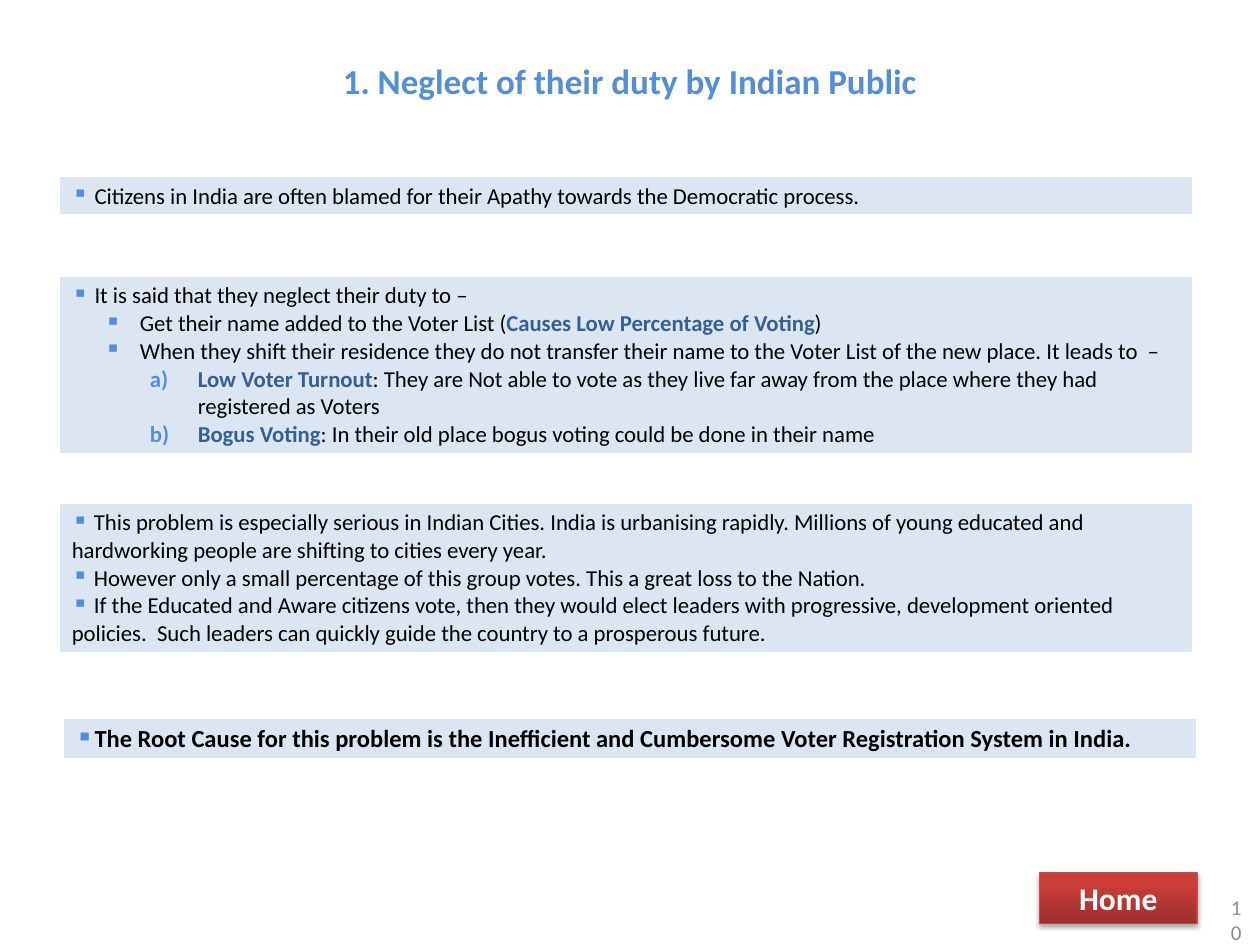
"""Build the slide on how citizens neglect their voting duty."""
from lxml import etree
from pptx import Presentation
from pptx.dml.color import RGBColor
from pptx.enum.shapes import MSO_SHAPE
from pptx.enum.text import MSO_ANCHOR, PP_ALIGN
from pptx.oxml.ns import qn
from pptx.util import Inches, Pt

RECT = MSO_SHAPE.RECTANGLE
MIDDLE = MSO_ANCHOR.MIDDLE
LEFT, CENTER = PP_ALIGN.LEFT, PP_ALIGN.CENTER

FONT = "Calibri"
COLORS = {
    "title": "558ED5", "bullet": "558ED5", "text": "000000", "key": "376092",
    "panel": "DCE6F2", "white": "FFFFFF", "edge": "BF4C48", "page": "8C8C8C",
}
TITLE = "1. Neglect of their duty by Indian Public"
GRADE = [(0, "9C2F2D"), (80, "CB3E3A"), (100, "CE3B37")]
BORDERS = [("lnL", 1), ("lnR", 1), ("lnT", 1), ("lnB", 3)]

# style: level, left margin, first-line indent, mark
STYLES = {
    "point": (0, 0.18, -0.18, "▪"),
    "root": (0, 0.15, -0.15, "▪"),
    "flow": (0, 0, 0, "▪"),
    "sub": (1, 0.54, -0.28, "▪"),
    "letter": (2, 1, -0.38, None),
}
PANELS = [
    {"at": (0.47, 1.4), "high": 0.32, "size": 13, "lines": [
        ("point", [("Citizens in India are often blamed for their Apathy towards "
                    "the Democratic process.", "text", False)]),
    ]},
    {"at": (0.47, 2.19), "high": 1.4, "size": 13, "lines": [
        ("point", [("It is said that they neglect their duty to –", "text", False)]),
        ("sub", [("Get their name added to the Voter List (", "text", False),
                 ("Causes Low Percentage of Voting", "key", True),
                 (")", "text", False)]),
        ("sub", [("When they shift their residence they do not transfer their name "
                  "to the Voter List of the new place. It leads to  –", "text", False)]),
        ("letter", [("Low Voter Turnout", "key", True),
                    (": They are Not able to vote as they live far away from the "
                     "place where they had registered as Voters", "text", False)]),
        ("letter", [("Bogus Voting", "key", True),
                    (": In their old place bogus voting could be done in their name",
                     "text", False)]),
    ]},
    {"at": (0.47, 3.99), "high": 1.18, "size": 13, "lines": [
        ("flow", [(" This problem is especially serious in Indian Cities. India is "
                   "urbanising rapidly. Millions of young educated and hardworking "
                   "people are shifting to cities every year.", "text", False)]),
        ("flow", [(" However only a small percentage of this group votes. This a "
                   "great loss to the Nation.", "text", False)]),
        ("flow", [(" If the Educated and Aware citizens vote, then they would elect "
                   "leaders with progressive, development oriented policies.  Such "
                   "leaders can quickly guide the country to a prosperous future.",
                   "text", False)]),
    ]},
    {"at": (0.5, 5.7), "high": 0.33, "size": 14, "lines": [
        ("root", [("The Root Cause for this problem is the Inefficient and "
                   "Cumbersome Voter Registration System in India.", "text", True)]),
    ]},
]


def box(*sides):
    return [Inches(side) for side in sides]


def node(parent, tag, **attrs):
    child = etree.SubElement(parent, qn("a:" + tag))
    for key, value in attrs.items():
        child.set(key, str(value))
    return child


def style_run(run, size, color, bold=False):
    run.font.name, run.font.size, run.font.bold = FONT, Pt(size), bold
    run.font.color.rgb = RGBColor.from_string(COLORS[color])


def set_text(shape, text, size, color, bold, align):
    frame = shape.text_frame
    frame.text = text
    frame.word_wrap = True
    frame.vertical_anchor = MIDDLE
    line = frame.paragraphs[0]
    line.alignment = align
    style_run(line.runs[0], size, color, bold)


def set_mark(line, style):
    level, left, indent, mark = STYLES[style]
    line.level = level
    props = line._p.get_or_add_pPr()
    props.set("marL", str(Inches(left)))
    props.set("indent", str(Inches(indent)))
    node(node(props, "buClr"), "srgbClr", val=COLORS["bullet"])
    if mark:
        node(props, "buChar", char=mark)
    else:
        node(props, "buAutoNum", type="alphaLcParenR")


def set_edges(cell):
    props = cell._tc.get_or_add_tcPr()
    for spot, (tag, width) in enumerate(BORDERS):
        edge = node(props, tag, w=Pt(width))
        node(node(edge, "solidFill"), "srgbClr", val=COLORS["white"])
        props.insert(spot, edge)


def add_panel(slide, panel):
    place = box(*panel["at"], 9, panel["high"])
    table = slide.shapes.add_table(1, 1, *place).table
    table.first_row = table.horz_banding = False
    cell = table.cell(0, 0)
    cell.fill.solid()
    cell.fill.fore_color.rgb = RGBColor.from_string(COLORS["panel"])
    set_edges(cell)
    frame = cell.text_frame
    for count, (style, parts) in enumerate(panel["lines"]):
        line = frame.add_paragraph() if count else frame.paragraphs[0]
        set_mark(line, style)
        for text, color, bold in parts:
            run = line.add_run()
            run.text = text
            style_run(run, panel["size"], color, bold)


def add_button(slide):
    button = slide.shapes.add_shape(RECT, *box(8.25, 6.93, 1.25, 0.4))
    button.fill.gradient()
    button.fill.gradient_angle = 90
    props = button._element.spPr
    stops = props.find(".//" + qn("a:gsLst"))
    for stop in list(stops):
        stops.remove(stop)
    for spot, color in GRADE:
        node(node(stops, "gs", pos=spot * 1000), "srgbClr", val=color)
    button.line.color.rgb = RGBColor.from_string(COLORS["edge"])
    button.line.width = Pt(0.75)
    button.shadow.inherit = False
    shade = node(props.find(qn("a:effectLst")), "outerShdw", blurRad=Pt(3.1),
                 dist=Pt(1.8), dir=90 * 60000, rotWithShape=0)
    node(node(shade, "srgbClr", val=COLORS["text"]), "alpha", val=35000)
    set_text(button, "Home", 18, "white", True, CENTER)


def main():
    deck = Presentation()
    deck.slide_width, deck.slide_height = box(10, 7.5)
    slide = deck.slides.add_slide(deck.slide_layouts[5])
    title = slide.shapes.title
    title.left, title.top, title.width, title.height = box(0.25, 0.42, 9.5, 0.44)
    set_text(title, TITLE, 20, "title", True, CENTER)
    for panel in PANELS:
        add_panel(slide, panel)
    add_button(slide)
    page = slide.shapes.add_textbox(*box(9.67, 7.1, 0.33, 0.4))
    set_text(page, "10", 12, "page", False, LEFT)
    deck.save("out.pptx")


if __name__ == "__main__":
    main()
